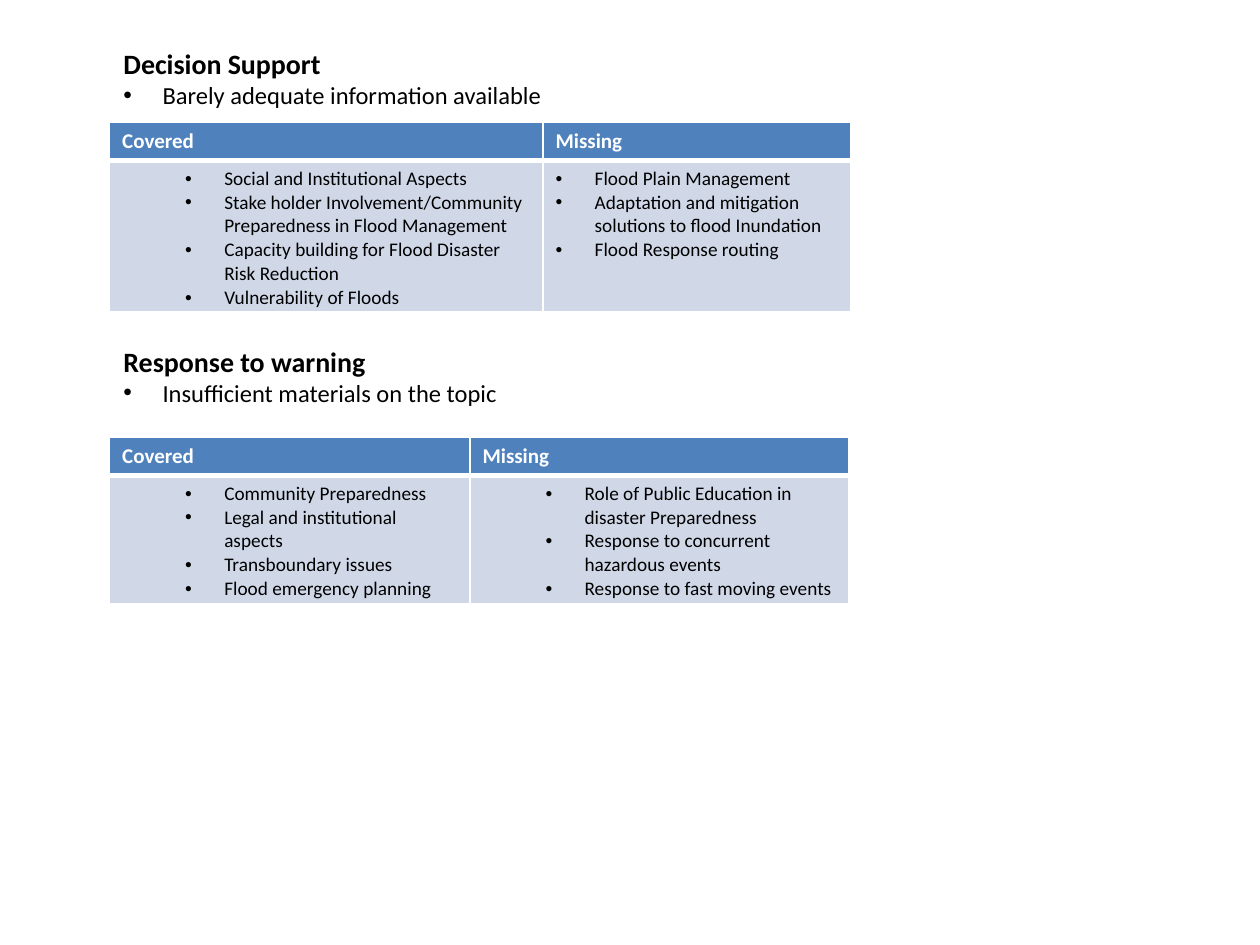
from dataclasses import dataclass

from lxml.etree import SubElement
from pptx import Presentation
from pptx.dml.color import RGBColor
from pptx.enum.text import MSO_ANCHOR, MSO_AUTO_SIZE
from pptx.oxml.ns import qn
from pptx.util import Inches, Pt


@dataclass(frozen=True)
class Theme:
    font: str = "Calibri"
    ink: str = "000000"
    white: str = "FFFFFF"
    header: str = "4F81BD"
    band: str = "D0D8E8"
    heading_size: int = 16
    list_size: int = 14
    header_size: int = 12
    cell_size: int = 11
    thin: int = 1
    thick: int = 3


THEME = Theme()
HANG = 0.31  # distance from bullet to its text
DEEP, SHALLOW = 0.81, HANG  # text indents
HEADING_INDENT = 0.5
SECTION_GAP = 134  # points kept free for the first table

SECTIONS = [
    ("Decision Support", "Barely adequate information available"),
    ("Response to warning", "Insufficient materials on the topic"),
]

# Each table: top, row heights, then columns of (title, width, indent, level, items)
TABLES = [
    (0.97, (0.3, 1.2), [
        ("Covered", 3.44, DEEP, 1, [
            "Social and Institutional Aspects",
            "Stake holder Involvement/Community Preparedness in Flood Management",
            "Capacity building for Flood Disaster Risk Reduction",
            "Vulnerability of Floods"]),
        ("Missing", 2.44, SHALLOW, 0, [
            "Flood Plain Management",
            "Adaptation and mitigation solutions to flood Inundation",
            "Flood Response routing"]),
    ]),
    (3.47, (0.3, 1.02), [
        ("Covered", 2.86, DEEP, 2, [
            "Community Preparedness",
            "Legal and institutional aspects",
            "Transboundary issues",
            "Flood emergency planning"]),
        ("Missing", 3.01, DEEP, 2, [
            "Role of Public Education in disaster Preparedness",
            "Response to concurrent hazardous events",
            "Response to fast moving events"]),
    ]),
]


def set_all(target, values):
    for name, value in values.items():
        setattr(target, name, value)


def write(frame, text, size, color, bold=False, indent=0, level=0, bullet=False, before=0):
    """Add one paragraph, using the frame's first one while it is empty."""
    para = frame.paragraphs[0] if not frame.text else frame.add_paragraph()
    set_all(para, {"level": level, "space_before": Pt(before), "space_after": Pt(0)})
    properties = para._p.get_or_add_pPr()
    properties.set("marL", str(Inches(indent)))
    properties.set("indent", str(Inches(-HANG if bullet else 0)))
    if bullet:
        SubElement(properties, qn("a:buFont")).set("typeface", "Arial")
        SubElement(properties, qn("a:buChar")).set("char", "•")
    else:
        SubElement(properties, qn("a:buNone"))
    span = para.add_run()
    span.text = text
    set_all(span.font, {"name": THEME.font, "size": Pt(size), "bold": bold})
    span.font.color.rgb = RGBColor.from_string(color)


def paint_cell(cell, color, edges):
    """Fill a cell and draw its white edges, given as tag to width."""
    cell.fill.solid()
    cell.fill.fore_color.rgb = RGBColor.from_string(color)
    properties = cell._tc.get_or_add_tcPr()
    for position, (tag, width) in enumerate(edges.items()):
        line = SubElement(properties, qn(f"a:{tag}"), w=str(Pt(width)))
        fill = SubElement(line, qn("a:solidFill"))
        SubElement(fill, qn("a:srgbClr")).set("val", THEME.white)
        properties.insert(position, line)


def add_sections(page, left, top, width, height):
    """Headings, each with its one-line finding, in the body placeholder."""
    box = page.placeholders[1]
    set_all(box, {"left": Inches(left), "top": Inches(top),
                  "width": Inches(width), "height": Inches(height)})
    frame = box.text_frame
    set_all(frame, {"word_wrap": True, "auto_size": MSO_AUTO_SIZE.NONE,
                    "vertical_anchor": MSO_ANCHOR.TOP})
    for number, (heading, finding) in enumerate(SECTIONS):
        write(frame, heading, THEME.heading_size, THEME.ink, bold=True,
              indent=HEADING_INDENT, before=number * SECTION_GAP)
        write(frame, finding, THEME.list_size, THEME.ink,
              indent=DEEP, level=1, bullet=True)


def add_coverage_table(page, left, top, heights, columns):
    """A header row over one row of bulleted lists."""
    width = sum(column[1] for column in columns)
    table = page.shapes.add_table(
        len(heights), len(columns), Inches(left), Inches(top),
        Inches(width), Inches(sum(heights))).table
    table.horz_banding = False
    for row, height in zip(table.rows, heights):
        row.height = Inches(height)

    thin, thick = THEME.thin, THEME.thick
    header_edges = {"lnL": thin, "lnR": thin, "lnT": thin, "lnB": thick}
    list_edges = {**header_edges, "lnT": thick, "lnB": thin}
    for index, (title, column_width, indent, level, items) in enumerate(columns):
        table.columns[index].width = Inches(column_width)
        head, body = table.cell(0, index), table.cell(1, index)
        paint_cell(head, THEME.header, header_edges)
        write(head.text_frame, title, THEME.header_size, THEME.white, bold=True)
        paint_cell(body, THEME.band, list_edges)
        body.margin_bottom = Inches(0.02)
        for item in items:
            write(body.text_frame, item, THEME.cell_size, THEME.ink,
                  indent=indent, level=level, bullet=True)


def main():
    deck = Presentation()
    set_all(deck, {"slide_width": Inches(10), "slide_height": Inches(7.5)})
    page = deck.slides.add_slide(deck.slide_layouts[1])
    # The headings live in the body, so the title goes unused
    title = page.shapes.title.element
    title.getparent().remove(title)

    add_sections(page, 0.38, 0.32, 9.62, 3.77)
    for top, heights, columns in TABLES:
        add_coverage_table(page, 0.87, top, heights, columns)
    deck.save("out.pptx")


if __name__ == "__main__":
    main()
